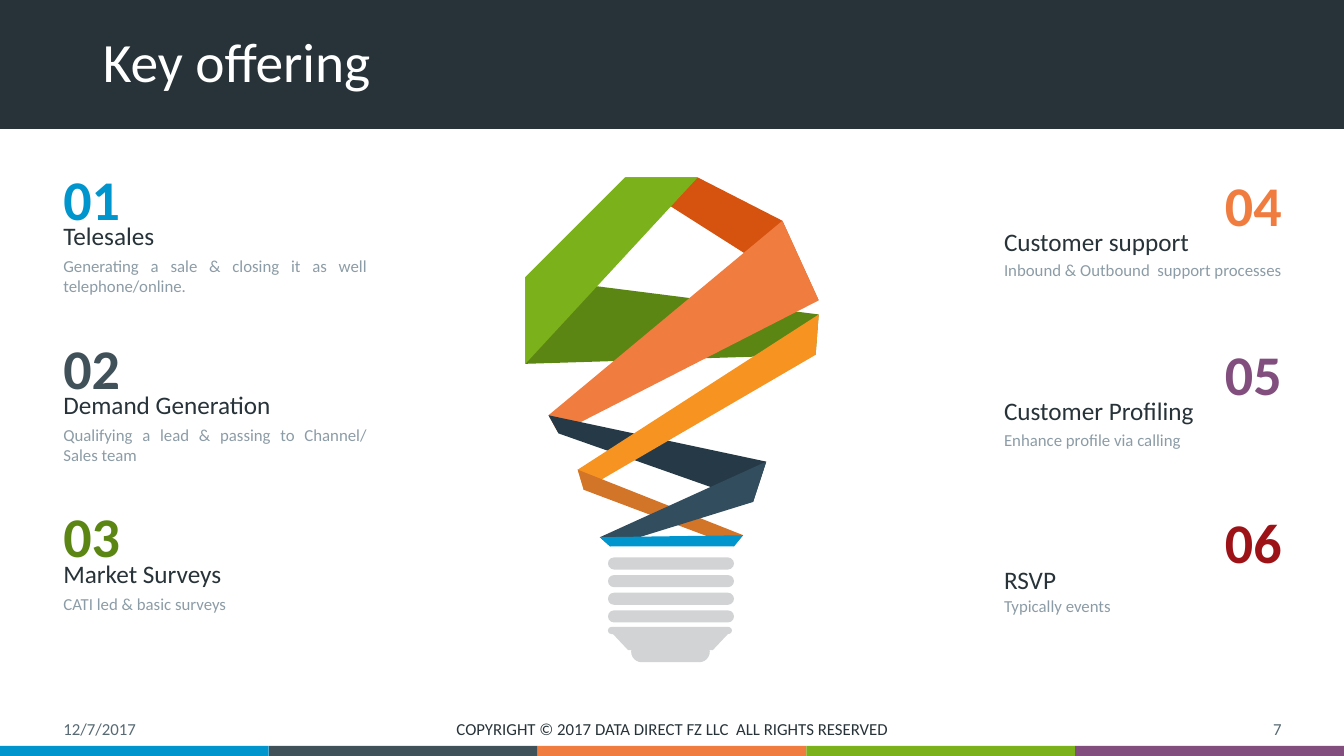
from dataclasses import dataclass

from pptx import Presentation
from pptx.dml.color import RGBColor
from pptx.enum import shapes, text
from pptx.util import Inches, Pt

FONT = "Calibri"
INK = "273339"
MUTED = "576973"
SOFT = "8C9CA6"
BASE_GREY = "D1D3D4"
ROW_STEP = 1.675
LEFT, CENTER, RIGHT, JUSTIFY = (
    text.PP_ALIGN.LEFT, text.PP_ALIGN.CENTER,
    text.PP_ALIGN.RIGHT, text.PP_ALIGN.JUSTIFY,
)


@dataclass
class Offering:
    number: str
    heading: str
    detail: str
    color: str
    detail_drop: float = 0.91  # from the top of the number to the detail


@dataclass
class Column:
    left: float
    top: float
    number_left: float
    number_align: text.PP_ALIGN
    offerings: list[Offering]


@dataclass
class Ribbon:
    color: str
    points: list[tuple[float, float]]


COLUMNS = [
    Column(0.53, 1.58, 0.53, LEFT, [
        Offering("01", "Telesales",
                 "Generating a sale & closing it as well telephone/online.", "0095CD"),
        Offering("02", "Demand Generation",
                 "Qualifying a lead & passing to Channel/ Sales team", "40515A"),
        Offering("03", "Market Surveys", "CATI led & basic surveys", "5C8614"),
    ]),
    Column(9.86, 1.64, 12.04, RIGHT, [
        Offering("04", "Customer support",
                 "Inbound & Outbound  support processes", "F17C3F", 0.89),
        Offering("05", "Customer Profiling", "Enhance profile via calling", "814E7E", 0.9),
        Offering("06", "RSVP", "Typically events", "9D1217", 0.87),
    ]),
]

# Bulb ribbons, from back to front
RIBBONS = [
    Ribbon("D5530F", [(6.2, 1.76), (8.12, 2.98), (7.76, 2.19), (6.92, 1.76)]),
    Ribbon("5C8614", [(5.21, 2.75), (8.12, 3.12), (8.09, 3.52), (5.21, 3.61)]),
    Ribbon("F17C3F", [(7.76, 2.19), (5.44, 4.12), (5.54, 4.3), (8.12, 2.98)]),
    Ribbon("253A46", [(5.44, 4.12), (7.6, 4.58), (7.47, 4.98), (5.54, 4.3)]),
    Ribbon("F79421", [(8.12, 3.12), (5.73, 4.66), (5.79, 4.86), (8.09, 3.52)]),
    Ribbon("D37528", [(5.73, 4.66), (7.37, 5.31), (7.28, 5.42), (5.79, 4.86)]),
    Ribbon("7BB21B", [(6.2, 1.76), (5.21, 2.75), (5.21, 3.61), (6.92, 1.76)]),
    Ribbon("324D5E", [(6.05, 5.42), (7.47, 4.98), (7.6, 4.58), (5.95, 5.33)]),
    Ribbon("0095CD", [(5.95, 5.33), (7.37, 5.31), (7.28, 5.42), (6.05, 5.42)]),
]
SOCKET = Ribbon(BASE_GREY, [(6.07, 6.28), (7.23, 6.28), (7.07, 6.45), (6.23, 6.45)])
FOOTER_COLORS = ["0095CD", "40515A", "F17C3F", "7BB21B", "814E7E"]


def rgb(color: str) -> RGBColor:
    return RGBColor.from_string(color)


def paint(sp, color: str) -> None:
    sp.shadow.inherit = False
    sp.fill.solid()
    sp.fill.fore_color.rgb = rgb(color)
    sp.line.fill.background()


def add_box(s, left: float, top: float, width: float, height: float,
            color: str, rounded: bool = False):
    kind = shapes.MSO_SHAPE.ROUNDED_RECTANGLE if rounded else shapes.MSO_SHAPE.RECTANGLE
    sp = s.shapes.add_shape(kind, Inches(left), Inches(top), Inches(width), Inches(height))
    if rounded:
        sp.adjustments[0] = 0.5
    paint(sp, color)
    return sp


def add_ribbon(s, ribbon: Ribbon) -> None:
    start, *rest = [(Inches(x), Inches(y)) for x, y in ribbon.points]
    builder = s.shapes.build_freeform(*start)
    builder.add_line_segments(rest, close=True)
    paint(builder.convert_to_shape(), ribbon.color)


def style(p, size: float, color: str, align: text.PP_ALIGN, bold: bool = False) -> None:
    p.alignment = align
    p.font.name = FONT
    p.font.size = Pt(size)
    p.font.bold = bold
    p.font.color.rgb = rgb(color)


def add_text(s, left: float, top: float, width: float, height: float, words: str,
             size: float, color: str, align: text.PP_ALIGN = LEFT, bold: bool = False,
             anchor: text.MSO_ANCHOR = text.MSO_ANCHOR.TOP) -> None:
    sp = s.shapes.add_textbox(Inches(left), Inches(top), Inches(width), Inches(height))
    tf = sp.text_frame
    tf.word_wrap = True
    tf.vertical_anchor = anchor
    tf.text = words
    style(tf.paragraphs[0], size, color, align, bold)


def add_title(s) -> None:
    title = s.shapes.title
    title.left, title.top = Inches(0.92), Inches(0.27)
    title.width, title.height = Inches(11.5), Inches(0.74)
    tf = title.text_frame
    tf.text = "Key offering"
    tf.auto_size = text.MSO_AUTO_SIZE.NONE
    tf.vertical_anchor = text.MSO_ANCHOR.MIDDLE
    tf.paragraphs[0].line_spacing = 0.9
    style(tf.paragraphs[0], 39.6, "FFFFFF", LEFT)
    # The band goes behind the title
    band = add_box(s, 0, 0, 13.33, 1.28, INK)
    title.element.addprevious(band.element)


def add_footer(s) -> None:
    width = 13.33 / len(FOOTER_COLORS)
    for i, color in enumerate(FOOTER_COLORS):
        add_box(s, i * width, 7.4, width, 0.1, color)
    for left, box_width, words, color, align in [
        (0.53, 3, "12/7/2017", MUTED, LEFT),
        (4.42, 4.5, "COPYRIGHT © 2017 DATA DIRECT FZ LLC  ALL RIGHTS RESERVED", INK, CENTER),
        (9.81, 3, "7", MUTED, RIGHT),
    ]:
        add_text(s, left, 7.07, box_width, 0.31, words, 12, color, align,
                 anchor=text.MSO_ANCHOR.MIDDLE)


def add_bulb(s) -> None:
    # Base: cap, socket, four threads and a thin rim
    add_box(s, 6.26, 6.36, 0.78, 0.21, BASE_GREY, rounded=True)
    add_ribbon(s, SOCKET)
    for i in range(4):
        add_box(s, 6.03, 5.53 + i * 0.175, 1.25, 0.12, BASE_GREY, rounded=True)
    add_box(s, 6.03, 6.22, 1.23, 0.07, BASE_GREY, rounded=True)
    for ribbon in RIBBONS:
        add_ribbon(s, ribbon)


def add_column(s, column: Column) -> None:
    for i, item in enumerate(column.offerings):
        top = column.top + i * ROW_STEP
        add_text(s, column.left, top + 0.56, 2.94, 0.4, item.heading, 18, INK)
        add_text(s, column.number_left, top, 0.77, 0.77, item.number, 40, item.color,
                 column.number_align, bold=True)
        add_text(s, column.left, top + item.detail_drop, 3.21, 0.5, item.detail, 12, SOFT,
                 JUSTIFY)


def main() -> None:
    prs = Presentation()
    prs.slide_width, prs.slide_height = Inches(13.33), Inches(7.5)
    s = prs.slides.add_slide(prs.slide_layouts[5])
    add_title(s)
    add_footer(s)
    add_bulb(s)
    for column in COLUMNS:
        add_column(s, column)
    prs.save("out.pptx")


if __name__ == "__main__":
    main()
